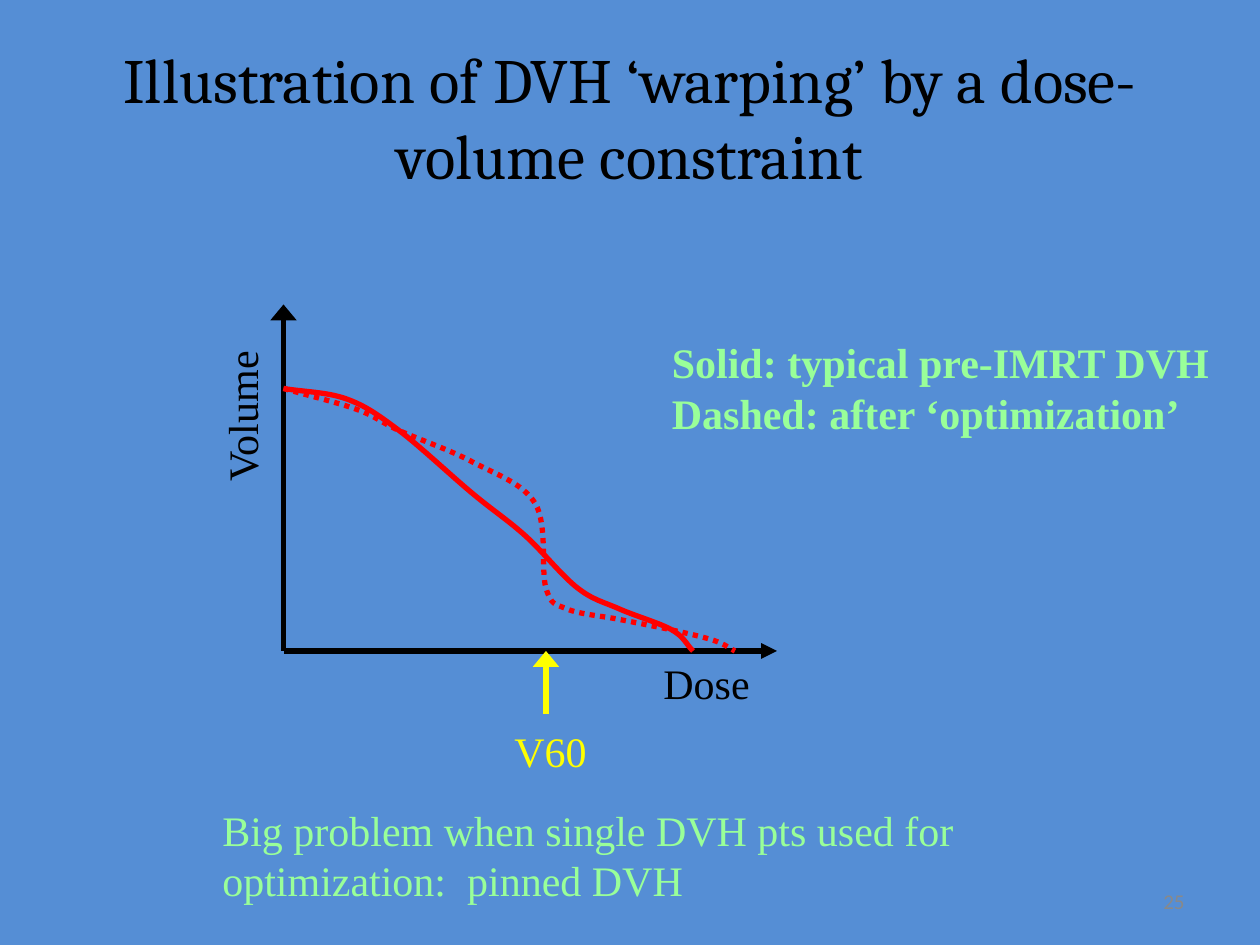
from dataclasses import dataclass

from lxml.etree import SubElement
from pptx import Presentation
from pptx.dml.color import RGBColor
from pptx.enum.dml import MSO_LINE
from pptx.enum.shapes import MSO_CONNECTOR
from pptx.enum.text import MSO_ANCHOR, PP_ALIGN
from pptx.oxml.ns import qn
from pptx.util import Emu, Pt

PX = 7620  # 120 px to the inch
BLACK, RED, YELLOW, GREEN, GREY = "000000", "FF0000", "FFFF00", "99FF99", "898989"
SERIF = "Times New Roman"


@dataclass
class Label:
    box: tuple[int, int, int, int]
    lines: list[str]
    color: str
    size: int = 24
    font: str | None = SERIF
    bold: bool = False
    align: PP_ALIGN = PP_ALIGN.LEFT
    anchor: MSO_ANCHOR = MSO_ANCHOR.TOP
    wrap: bool = True
    rotation: int = 0


@dataclass
class Arrow:
    start: tuple[int, int]
    end: tuple[int, int]
    color: str
    head_width: str = "med"


@dataclass
class Curve:
    knots: list[tuple[int, int]]
    dash: MSO_LINE | None = None


def px(length: float) -> Emu:
    return Emu(round(length * PX))


def rgb(color: str) -> RGBColor:
    return RGBColor.from_string(color)


def style_line(line, color: str) -> None:
    line.width = Pt(3)
    line.color.rgb = rgb(color)


def draw_label(slide, label: Label) -> None:
    textbox = slide.shapes.add_textbox(*map(px, label.box))
    textbox.rotation = label.rotation
    frame = textbox.text_frame
    frame.word_wrap = label.wrap
    frame.vertical_anchor = label.anchor
    font_values = {"size": Pt(label.size), "name": label.font, "bold": label.bold}
    for index, line in enumerate(label.lines):
        paragraph = frame.add_paragraph() if index else frame.paragraphs[0]
        paragraph.alignment = label.align
        run = paragraph.add_run()
        run.text = line
        for name, value in font_values.items():
            setattr(run.font, name, value)
        run.font.color.rgb = rgb(label.color)


def draw_arrow(shapes, arrow: Arrow) -> None:
    connector = shapes.add_connector(
        MSO_CONNECTOR.STRAIGHT, *map(px, arrow.start + arrow.end))
    style_line(connector.line, arrow.color)
    properties = connector._element.spPr
    SubElement(properties.find(qn("a:ln")), qn("a:tailEnd"),
               type="triangle", w=arrow.head_width)
    SubElement(properties, qn("a:effectLst"))


def control_points(before, start, end, after) -> list[tuple[float, float]]:
    """Bezier handles of the Catmull-Rom segment from start to end."""
    return [tuple(s + (e - b) / 6 for b, s, e in zip(before, start, end)),
            tuple(e - (a - s) / 6 for s, e, a in zip(start, end, after))]


def reflect(end, inner) -> tuple[int, int]:
    return tuple(2 * e - i for e, i in zip(end, inner))


def draw_curve(slide, curve: Curve) -> None:
    knots = curve.knots
    builder = slide.shapes.build_freeform(*map(px, knots[0]))
    builder.add_line_segments([tuple(map(px, knot)) for knot in knots[1:]],
                              close=False)
    outline = builder.convert_to_shape()

    # Bend each straight segment into a Bezier segment
    left, top = map(min, zip(*knots))
    padded = [reflect(knots[0], knots[1]), *knots, reflect(knots[-1], knots[-2])]
    segments = list(outline._element.iter(qn("a:lnTo")))
    for segment, *neighbours in zip(segments, padded, padded[1:], padded[2:], padded[3:]):
        bend = segment.makeelement(qn("a:cubicBezTo"))
        for x, y in [*control_points(*neighbours), neighbours[2]]:
            SubElement(bend, qn("a:pt"), x=str(px(x - left)), y=str(px(y - top)))
        segment.getparent().replace(segment, bend)

    outline.shadow.inherit = False
    outline.fill.background()
    style_line(outline.line, RED)
    outline.line.dash_style = curve.dash


# Axes, sharing one origin, and the constraint marker
ORIGIN = (270, 620)
AXES = [
    Arrow(ORIGIN, (740, 620), BLACK),
    Arrow(ORIGIN, (270, 290), BLACK, "lg"),
]
V60_MARKER = Arrow((520, 680), (520, 620), YELLOW, "lg")

# Dose-volume histograms before and after optimization
CURVES = [
    Curve([(270, 370), (330, 380), (380, 410), (450, 470), (500, 510),
           (550, 560), (590, 580), (640, 600), (660, 620)]),
    Curve([(270, 370), (340, 390), (380, 410), (450, 440), (510, 480),
           (520, 560), (540, 580), (590, 590), (640, 600), (680, 610),
           (700, 620)], MSO_LINE.ROUND_DOT),
]

# Title, marker name, legend, conclusion, axis names and page number
TITLE = Label((60, 36, 1080, 150),
              ["Illustration of DVH ‘warping’ by a dose-volume constraint"],
              BLACK, size=36, font="Cambria", align=PP_ALIGN.CENTER,
              anchor=MSO_ANCHOR.MIDDLE)
LABELS = [
    Label((478, 685, 94, 60), ["V60"], YELLOW, wrap=False),
    Label((628, 315, 539, 108),
          ["Solid: typical pre-IMRT DVH", "Dashed: after ‘optimization’"],
          GREEN, bold=True, wrap=False),
    Label((200, 760, 739, 108),
          ["Big problem when single DVH pts used for optimization:  pinned DVH"],
          GREEN),
    Label((620, 620, 110, 60), ["Dose"], BLACK),
    Label((150, 360, 160, 60), ["Volume"], BLACK, rotation=270),
    Label((860, 834, 280, 48), ["25"], GREY, size=12, font=None,
          align=PP_ALIGN.RIGHT, anchor=MSO_ANCHOR.MIDDLE),
]


def main() -> None:
    deck = Presentation()
    deck.slide_width, deck.slide_height = px(1200), px(900)
    slide = deck.slides.add_slide(deck.slide_layouts[6])
    slide.background.fill.solid()
    slide.background.fill.fore_color.rgb = rgb("558ED5")
    draw_label(slide, TITLE)
    axes = slide.shapes.add_group_shape()
    for axis in AXES:
        draw_arrow(axes.shapes, axis)
    for curve in CURVES:
        draw_curve(slide, curve)
    draw_arrow(slide.shapes, V60_MARKER)
    for label in LABELS:
        draw_label(slide, label)
    deck.save("out.pptx")


if __name__ == "__main__":
    main()
